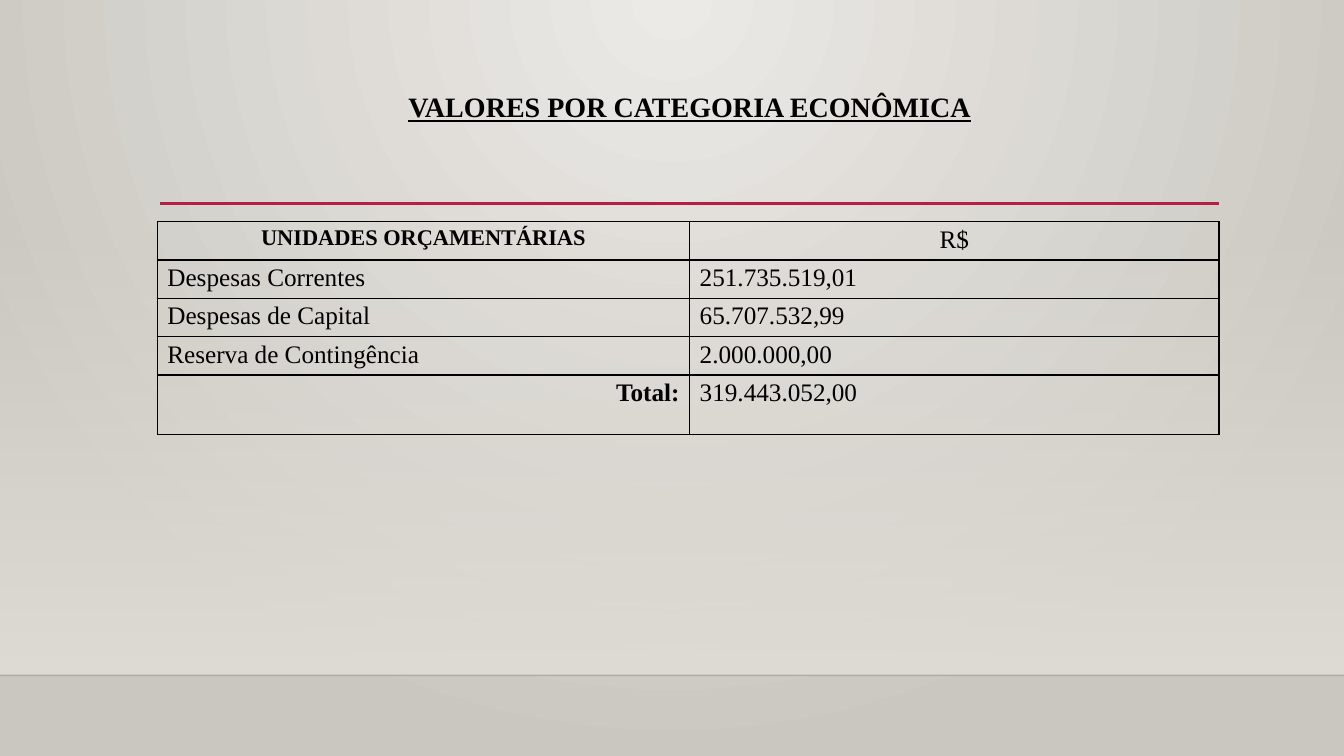
from lxml import etree
from pptx import Presentation
from pptx.dml.color import RGBColor
from pptx.enum.shapes import MSO_CONNECTOR, MSO_SHAPE
from pptx.enum.text import MSO_ANCHOR, PP_ALIGN
from pptx.oxml.ns import qn
from pptx.util import Inches, Pt

LEFT, CENTER, RIGHT = PP_ALIGN.LEFT, PP_ALIGN.CENTER, PP_ALIGN.RIGHT
TOP = MSO_ANCHOR.TOP
RECTANGLE = MSO_SHAPE.RECTANGLE
STRAIGHT = MSO_CONNECTOR.STRAIGHT

TITLE = "VALORES POR CATEGORIA ECONÔMICA"
ROWS = [
    ("UNIDADES ORÇAMENTÁRIAS", "R$"),
    ("Despesas Correntes", "251.735.519,01"),
    ("Despesas de Capital", "65.707.532,99"),
    ("Reserva de Contingência", "2.000.000,00"),
    ("Total:", "319.443.052,00"),
]
SPECIAL = {
    (0, 0): (CENTER, 16, True),
    (0, 1): (CENTER, 18, False),
    (4, 0): (RIGHT, 18, True),
}
PLAIN = (LEFT, 18, False)

FONT = "Times New Roman"
COLORS = {
    "text": "000000",
    "light": "ECEAE7",
    "dark": "CAC7C1",
    "wall": "DFDBD5",
    "floor": "000001",
    "accent": "B71E42",
}
WIDTH, HEIGHT = 13.33, 7.5
MARGIN, CONTENT = 1.59, 10.5
FLOOR, WALL_TOP = 6.7, 2.21
TABLE_LEFT, TABLE_TOP = 1.56, 2.2
COLUMNS = (5.28, 5.25)
ROW_HEIGHT, TOTAL_HEIGHT = 0.38, 0.59


def rgb(name):
    return RGBColor.from_string(COLORS[name])


def add_alpha(color, percent):
    etree.SubElement(color, qn("a:alpha"), val=str(percent * 1000))


def set_gradient(fill, names):
    fill.gradient()
    for stop, name, position in zip(fill.gradient_stops, names, (0, 1)):
        stop.color.rgb = rgb(name)
        stop.position = position


def add_rule(page, start, end, y, name, width):
    rule = page.shapes.add_connector(
        STRAIGHT, Inches(start), Inches(y), Inches(end), Inches(y))
    rule.line.color.rgb = rgb(name)
    rule.line.width = Pt(width)
    etree.SubElement(rule._element.spPr, qn("a:effectLst"))
    return rule


def write(para, text, align, size, bold, underline=False):
    para.alignment = align
    span = para.add_run()
    span.text = text
    font = span.font
    font.name, font.size, font.bold = FONT, Pt(size), bold
    font.color.rgb = rgb("text")
    if underline:
        font.underline = True


def add_borders(cell):
    properties = cell._tc.get_or_add_tcPr()
    for index, side in enumerate(("lnL", "lnR", "lnT", "lnB")):
        border = etree.Element(qn("a:" + side), w=str(Pt(1)))
        fill = etree.SubElement(border, qn("a:solidFill"))
        etree.SubElement(fill, qn("a:srgbClr"), val=COLORS["text"])
        properties.insert(index, border)


def add_background(page):
    set_gradient(page.background.fill, ("light", "dark"))
    gradient = page._element.xpath("./p:cSld/p:bg//a:gradFill")[0]
    gradient.remove(gradient.find(qn("a:lin")))
    circle = etree.SubElement(gradient, qn("a:path"), path="circle")
    etree.SubElement(circle, qn("a:fillToRect"),
                     l="43000", t="0", r="43000", b="100000")

    wall = page.shapes.add_shape(RECTANGLE, 0, Inches(WALL_TOP),
                                 Inches(WIDTH), Inches(FLOOR - WALL_TOP))
    wall.shadow.inherit = False
    wall.line.fill.background()
    set_gradient(wall.fill, ("wall", "wall"))
    wall.fill.gradient_angle = 270
    add_alpha(wall._element.xpath(".//a:gs/a:srgbClr")[0], 0)

    edge = add_rule(page, 0, WIDTH, FLOOR, "floor", 1)
    add_alpha(edge._element.xpath(".//a:ln//a:srgbClr")[0], 20)
    add_rule(page, MARGIN, MARGIN + CONTENT, 2.02, "accent", 2.5)


def add_title(page):
    title = page.shapes.title
    title.left, title.top = Inches(MARGIN), Inches(0.88)
    title.width, title.height = Inches(CONTENT), Inches(1.15)
    title.text_frame.vertical_anchor = TOP
    para = title.text_frame.paragraphs[0]
    para.line_spacing = 0.9
    write(para, TITLE, CENTER, 20, True, underline=True)


def add_values(page):
    heights = [ROW_HEIGHT] * (len(ROWS) - 1) + [TOTAL_HEIGHT]
    table = page.shapes.add_table(
        len(ROWS), len(COLUMNS), Inches(TABLE_LEFT), Inches(TABLE_TOP),
        Inches(sum(COLUMNS)), Inches(sum(heights))).table
    table.first_row = table.horz_banding = False
    for column, width in zip(table.columns, COLUMNS):
        column.width = Inches(width)
    for r, (height, texts) in enumerate(zip(heights, ROWS)):
        table.rows[r].height = Inches(height)
        for c, text in enumerate(texts):
            cell = table.cell(r, c)
            cell.fill.background()
            cell.margin_top = cell.margin_bottom = Inches(0.04)
            cell.vertical_anchor = TOP
            add_borders(cell)
            write(cell.text_frame.paragraphs[0], text,
                  *SPECIAL.get((r, c), PLAIN))


def main():
    deck = Presentation()
    deck.slide_width, deck.slide_height = Inches(WIDTH), Inches(HEIGHT)
    page = deck.slides.add_slide(deck.slide_layouts[5])
    add_background(page)
    add_title(page)
    add_values(page)
    deck.save("out.pptx")


if __name__ == "__main__":
    main()
